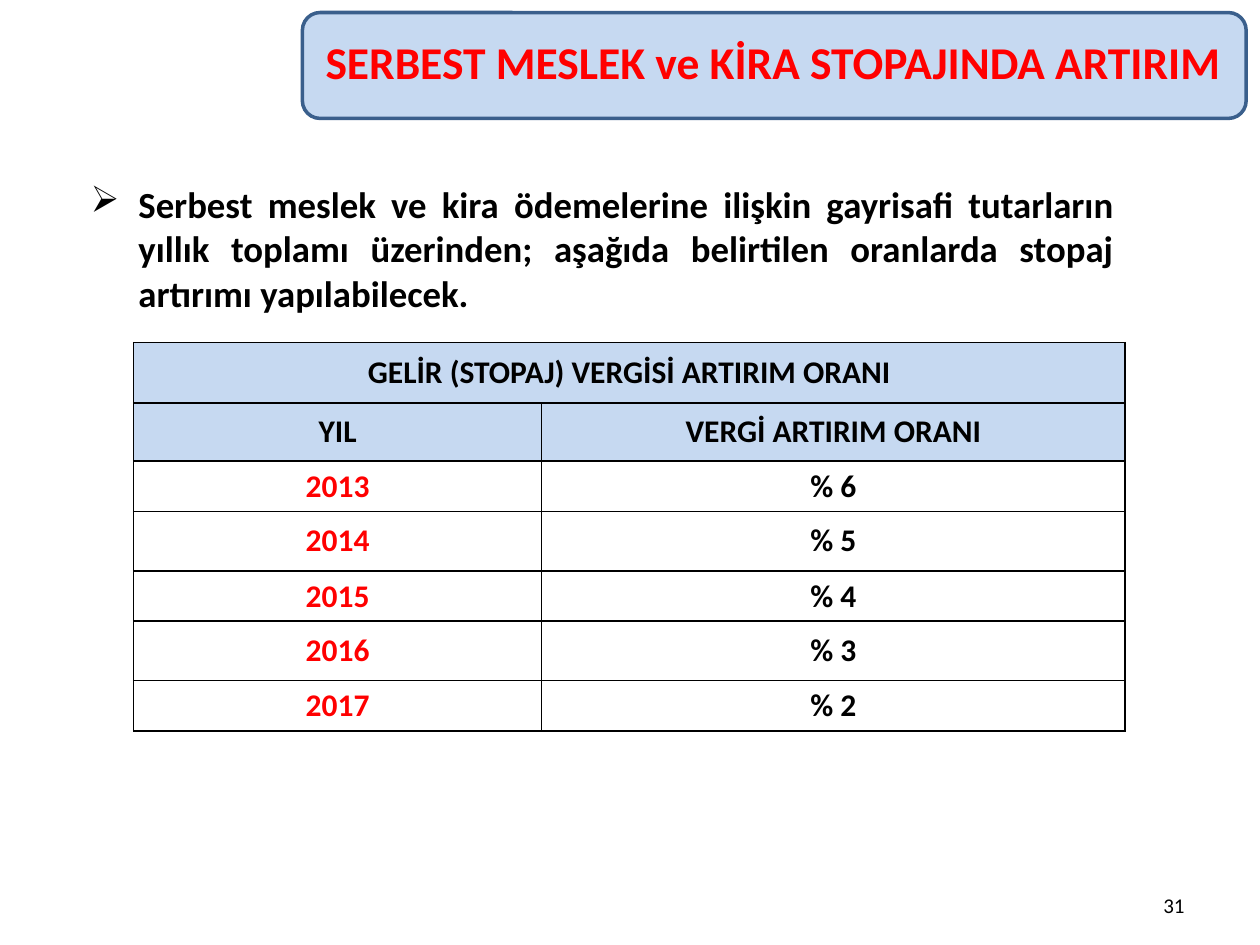
from lxml.etree import SubElement
from pptx import Presentation
from pptx.dml.color import RGBColor
from pptx.enum.shapes import MSO_SHAPE
from pptx.enum.text import MSO_ANCHOR, PP_ALIGN
from pptx.oxml.ns import qn
from pptx.util import Inches, Pt

COLORS = {"red": "FF0000", "black": "000000", "blue": "C6D9F1", "edge": "3A5F8C"}
HEADS = ["YIL", "VERGİ ARTIRIM ORANI"]
RATES = [("2013", "% 6"), ("2014", "% 5"), ("2015", "% 4"), ("2016", "% 3"), ("2017", "% 2")]
WIDTHS = [3.24, 4.63]
HEIGHTS = [0.48, 0.46, 0.4, 0.47, 0.4, 0.47, 0.4]


def color(name):
    return RGBColor.from_string(COLORS[name])


def style(para, size, tint="black", align=PP_ALIGN.CENTER, bold=True):
    para.alignment = align
    font = para.font
    for key, value in {"name": "Calibri", "size": Pt(size), "bold": bold}.items():
        setattr(font, key, value)
    font.color.rgb = color(tint)


def add_text(slide, box, text, anchor=MSO_ANCHOR.MIDDLE, pad=0.1):
    frame = slide.shapes.add_textbox(*map(Inches, box)).text_frame
    form = {"word_wrap": True, "vertical_anchor": anchor,
            "margin_left": Inches(pad), "margin_right": Inches(pad)}
    for key, value in form.items():
        setattr(frame, key, value)
    para = frame.paragraphs[0]
    para.text = text
    return para


def add_banner(slide):
    shape = slide.shapes.add_shape(
        MSO_SHAPE.ROUNDED_RECTANGLE, *map(Inches, (2.4, 0.1, 7.49, 0.84)))
    shape.shadow.inherit = False
    shape.fill.solid()
    shape.fill.fore_color.rgb = color("blue")
    shape.line.color.rgb = color("edge")
    shape.line.width = Pt(2)


def add_bullet(para):
    props = para._p.get_or_add_pPr()
    props.set("marL", str(Inches(0.88)))
    props.set("indent", str(Inches(-0.38)))
    SubElement(props, qn("a:buChar")).set("char", "➢")


def add_border(cell):
    props = cell._tc.get_or_add_tcPr()
    for side in ("lnL", "lnR", "lnT", "lnB"):
        line = SubElement(props, qn(f"a:{side}"), w=str(Pt(1)))
        fill = SubElement(line, qn("a:solidFill"))
        SubElement(fill, qn("a:srgbClr"), val=COLORS["black"])


def fill_cell(cell, text, head, tint):
    add_border(cell)
    if head:
        cell.fill.solid()
        cell.fill.fore_color.rgb = color("blue")
    else:
        cell.fill.background()
    cell.vertical_anchor = MSO_ANCHOR.MIDDLE
    cell.text = text
    style(cell.text_frame.paragraphs[0], 18, tint)


def add_rates(slide):
    rows = [("GELİR (STOPAJ) VERGİSİ ARTIRIM ORANI", ""), HEADS, *RATES]
    box = (1.06, 2.72, sum(WIDTHS), sum(HEIGHTS))
    table = slide.shapes.add_table(len(rows), len(WIDTHS), *map(Inches, box)).table
    table.first_row = table.horz_banding = False
    for col, width in zip(table.columns, WIDTHS):
        col.width = Inches(width)
    for r, (row, height) in enumerate(zip(rows, HEIGHTS)):
        table.rows[r].height = Inches(height)
        head = r < 2
        for c, text in enumerate(row):
            tint = "red" if c == 0 and not head else "black"
            fill_cell(table.cell(r, c), text, head, tint)
    table.cell(0, 0).merge(table.cell(0, 1))


def main():
    deck = Presentation()
    deck.slide_width, deck.slide_height = Inches(10), Inches(7.5)
    slide = deck.slides.add_slide(deck.slide_layouts[6])
    add_banner(slide)
    page = add_text(slide, (7.17, 6.83, 2.33, 0.5), "31", MSO_ANCHOR.BOTTOM)
    style(page, 12, align=PP_ALIGN.RIGHT, bold=False)
    title = add_text(slide, (2.48, 0.21, 7.32, 0.55),
                     "SERBEST MESLEK ve KİRA STOPAJINDA ARTIRIM", pad=0)
    style(title, 26, "red")
    add_rates(slide)
    body = add_text(slide, (0.12, 1.39, 8.82, 1.16),
                    "Serbest meslek ve kira ödemelerine ilişkin gayrisafi tutarların "
                    "yıllık toplamı üzerinden; aşağıda belirtilen oranlarda stopaj "
                    "artırımı yapılabilecek.")
    add_bullet(body)
    style(body, 21, align=PP_ALIGN.JUSTIFY)
    deck.save("out.pptx")


if __name__ == "__main__":
    main()
